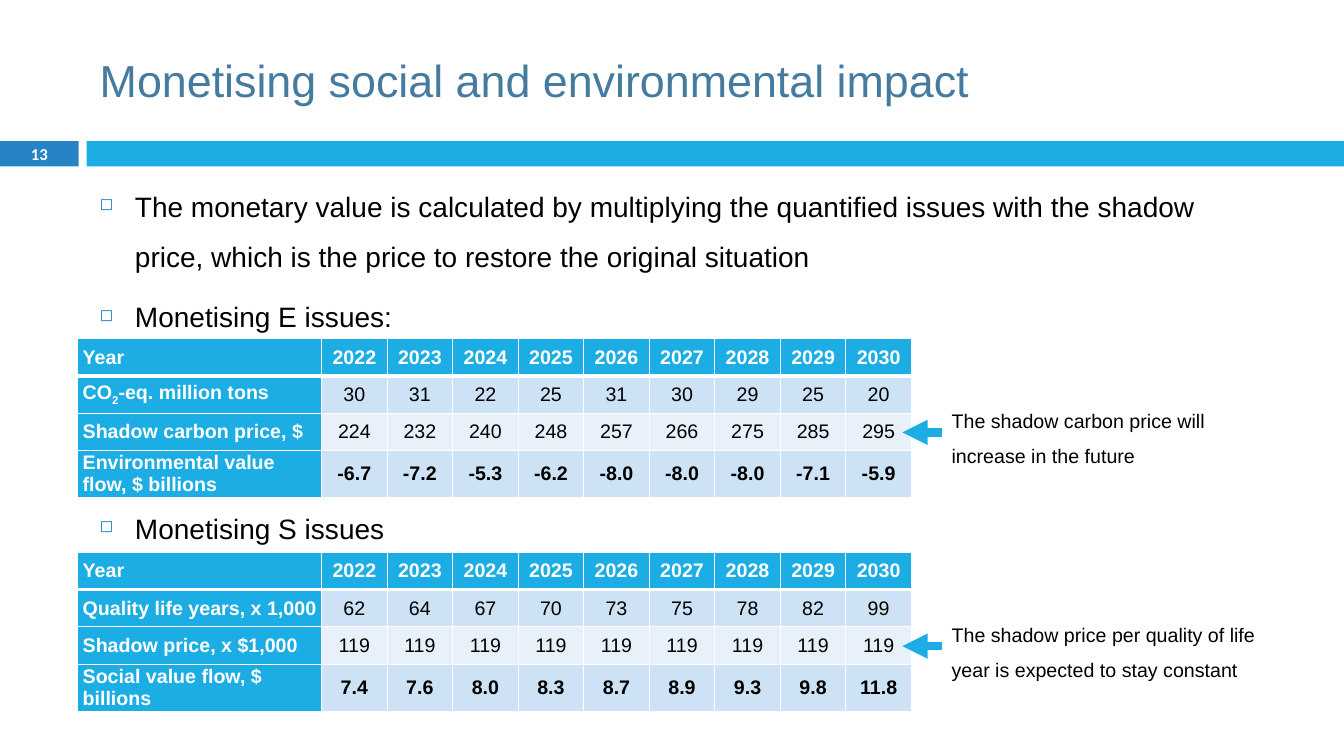
from dataclasses import dataclass

from lxml import etree
from pptx import Presentation
from pptx.dml.color import RGBColor
from pptx.enum.shapes import MSO_CONNECTOR, MSO_SHAPE
from pptx.enum.text import MSO_ANCHOR, PP_ALIGN
from pptx.oxml.ns import qn
from pptx.util import Inches, Pt

RECTANGLE = MSO_SHAPE.RECTANGLE
STRAIGHT = MSO_CONNECTOR.STRAIGHT
TOP, MIDDLE = MSO_ANCHOR.TOP, MSO_ANCHOR.MIDDLE
LEFT, CENTER = PP_ALIGN.LEFT, PP_ALIGN.CENTER

YEARS = [str(year) for year in range(2022, 2031)]
ENVIRONMENTAL_ROWS = [
    ["Year", *YEARS],
    ["CO2-eq. million tons", *"30 31 22 25 31 30 29 25 20".split()],
    ["Shadow carbon price, $", *"224 232 240 248 257 266 275 285 295".split()],
    ["Environmental value flow, $ billions", *"-6.7 -7.2 -5.3 -6.2 -8.0 -8.0 -8.0 -7.1 -5.9".split()],
]
SOCIAL_ROWS = [
    ["Year", *YEARS],
    ["Quality life years, x 1,000", *"62 64 67 70 73 75 78 82 99".split()],
    ["Shadow price, x $1,000", *["119"] * len(YEARS)],
    ["Social value flow, $ billions", *"7.4 7.6 8.0 8.3 8.7 8.9 9.3 9.8 11.8".split()],
]
BULLETS = [
    ("The monetary value is calculated by multiplying the quantified issues with the shadow "
     "price, which is the price to restore the original situation", 7),
    ("Monetising E issues:", 7),
    ("Monetising S issues", 115),
]
IMPACTS = [
    (3.36, ENVIRONMENTAL_ROWS, "The shadow carbon price will increase in the future"),
    (5.48, SOCIAL_ROWS, "The shadow price per quality of life year is expected to stay constant"),
]


@dataclass(frozen=True)
class Theme:
    """Colours, fonts and type sizes of the slide."""
    accent: str = "1CADE4"
    dark_accent: str = "2683C6"
    title: str = "457B9E"
    text: str = "000000"
    white: str = "FFFFFF"
    band: str = "CDE3F5"
    light_band: str = "E8F1FA"
    font: str = "Arial"
    number_font: str = "Calibri"
    title_size: float = 32
    body_size: float = 20
    small_size: float = 14
    number_size: float = 11.9


class SlideBuilder:
    """Draws styled elements on one slide."""

    def __init__(self, page, theme):
        self.page = page
        self.theme = theme

    def style(self, paragraph, size, color, bold=False, font=None):
        """Set the font of a whole paragraph."""
        paragraph.font.name = font or self.theme.font
        paragraph.font.size = Pt(size)
        paragraph.font.bold = bold
        paragraph.font.color.rgb = RGBColor.from_string(color)

    def bar(self, left, width, color):
        """Draw one part of the divider under the title."""
        shape = self.page.shapes.add_shape(RECTANGLE, Inches(left), Inches(1.4), Inches(width), Inches(0.25))
        shape.shadow.inherit = False
        shape.fill.solid()
        shape.fill.fore_color.rgb = RGBColor.from_string(color)
        shape.line.fill.background()

    def frame(self, left, top, width, height, anchor=MIDDLE):
        """Add a wrapping text box and return its text frame."""
        box = self.page.shapes.add_textbox(Inches(left), Inches(top), Inches(width), Inches(height))
        box.text_frame.word_wrap = True
        box.text_frame.vertical_anchor = anchor
        return box.text_frame

    def label(self, place, text, size, color, bold=False, font=None, align=LEFT, spacing=None):
        """Add a text box with one paragraph."""
        paragraph = self.frame(*place).paragraphs[0]
        paragraph.text = text
        paragraph.alignment = align
        paragraph.line_spacing = spacing
        self.style(paragraph, size, color, bold, font)

    def bullets(self, place, items):
        """Add a bulleted list of text and space-before pairs."""
        frame = self.frame(*place, anchor=TOP)
        for index, (text, gap) in enumerate(items):
            paragraph = frame.add_paragraph() if index else frame.paragraphs[0]
            paragraph.text = text
            paragraph.line_spacing = 1.5
            paragraph.space_before = Pt(gap)
            self.style(paragraph, self.theme.body_size, self.theme.text)
            properties = paragraph._p.get_or_add_pPr()
            properties.set("marL", str(Inches(0.35)))
            properties.set("indent", str(-Inches(0.35)))
            marks = [etree.Element(qn(tag)) for tag in ("a:buClr", "a:buSzPct", "a:buChar")]
            etree.SubElement(marks[0], qn("a:srgbClr"), val=self.theme.dark_accent)
            marks[1].set("val", "60000")
            marks[2].set("char", "◻")
            position = list(properties).index(properties.find(qn("a:defRPr")))
            properties[position:position] = marks

    def borders(self, cell, bottom):
        """Draw white cell borders with a given bottom weight."""
        properties = cell._tc.get_or_add_tcPr()
        weights = {"a:lnL": 1, "a:lnR": 1, "a:lnT": 1, "a:lnB": bottom}
        for position, (tag, weight) in enumerate(weights.items()):
            line = etree.Element(qn(tag), w=str(Pt(weight)))
            fill = etree.SubElement(line, qn("a:solidFill"))
            etree.SubElement(fill, qn("a:srgbClr"), val=self.theme.white)
            properties.insert(position, line)

    def cell(self, cell, text, row, column, last_row):
        """Fill and style one table cell."""
        theme = self.theme
        heading = row == 0 or column == 0
        band = theme.band if row % 2 else theme.light_band
        cell.fill.solid()
        cell.fill.fore_color.rgb = RGBColor.from_string(theme.accent if heading else band)
        cell.vertical_anchor = MIDDLE
        cell.margin_left = cell.margin_right = Inches(0.05)
        cell.margin_top = cell.margin_bottom = 0
        paragraph = cell.text_frame.paragraphs[0]
        paragraph.alignment = CENTER if column else LEFT
        paragraph.space_before = paragraph.space_after = Pt(2)
        before, formula, after = text.partition("CO2")
        parts = [("CO", None), ("2", "-25000"), (after, None)] if formula else [(before, None)]
        for part, baseline in parts:
            span = paragraph.add_run()
            span.text = part
            if baseline:
                span._r.get_or_add_rPr().set("baseline", baseline)
        self.style(paragraph, theme.small_size, theme.white if heading else theme.text, heading or row == last_row)
        self.borders(cell, 1 if row else 3)

    def table(self, top, rows):
        """Add a yearly value table."""
        widths = [2.42] + [0.65] * len(YEARS)
        heights = [0.37] * (len(rows) - 1) + [0.44]
        table = self.page.shapes.add_table(
            len(rows), len(widths), Inches(0.77), Inches(top), Inches(sum(widths)), Inches(sum(heights))).table
        for column, width in zip(table.columns, widths):
            column.width = Inches(width)
        for row, height in zip(table.rows, heights):
            row.height = Inches(height)
        for row, values in enumerate(rows):
            for column, text in enumerate(values):
                self.cell(table.cell(row, column), text, row, column, len(rows) - 1)

    def arrow(self, start, end, y):
        """Draw a thick horizontal arrow."""
        connector = self.page.shapes.add_connector(STRAIGHT, Inches(start), Inches(y), Inches(end), Inches(y))
        connector.line.color.rgb = RGBColor.from_string(self.theme.accent)
        connector.line.width = Pt(6)
        etree.SubElement(connector.line._get_or_add_ln(), qn("a:tailEnd"), type="triangle")
        etree.SubElement(connector._element.spPr, qn("a:effectLst"))


def main():
    """Build and save the slide."""
    deck = Presentation()
    deck.slide_width, deck.slide_height = Inches(13.33), Inches(7.5)
    theme = Theme()
    builder = SlideBuilder(deck.slides.add_slide(deck.slide_layouts[6]), theme)
    builder.bar(0, 0.78, theme.dark_accent)
    builder.bar(0.86, 12.47, theme.accent)
    builder.label((0.89, 0.25, 11.89, 1.08), "Monetising social and environmental impact", theme.title_size, theme.title)
    builder.label((0, 1.39, 0.78, 0.27), "13", theme.number_size, theme.white, True, theme.number_font, CENTER)
    builder.bullets((0.89, 1.66, 11.36, 5.39), BULLETS)
    for top, rows, note in IMPACTS:
        builder.table(top, rows)
        builder.label((9.34, top + 0.28, 3.44, 1.3), note, theme.small_size, theme.text, spacing=1.5)
        builder.arrow(9.34, 8.95, top + 0.93)
    deck.save("out.pptx")


if __name__ == "__main__":
    main()
